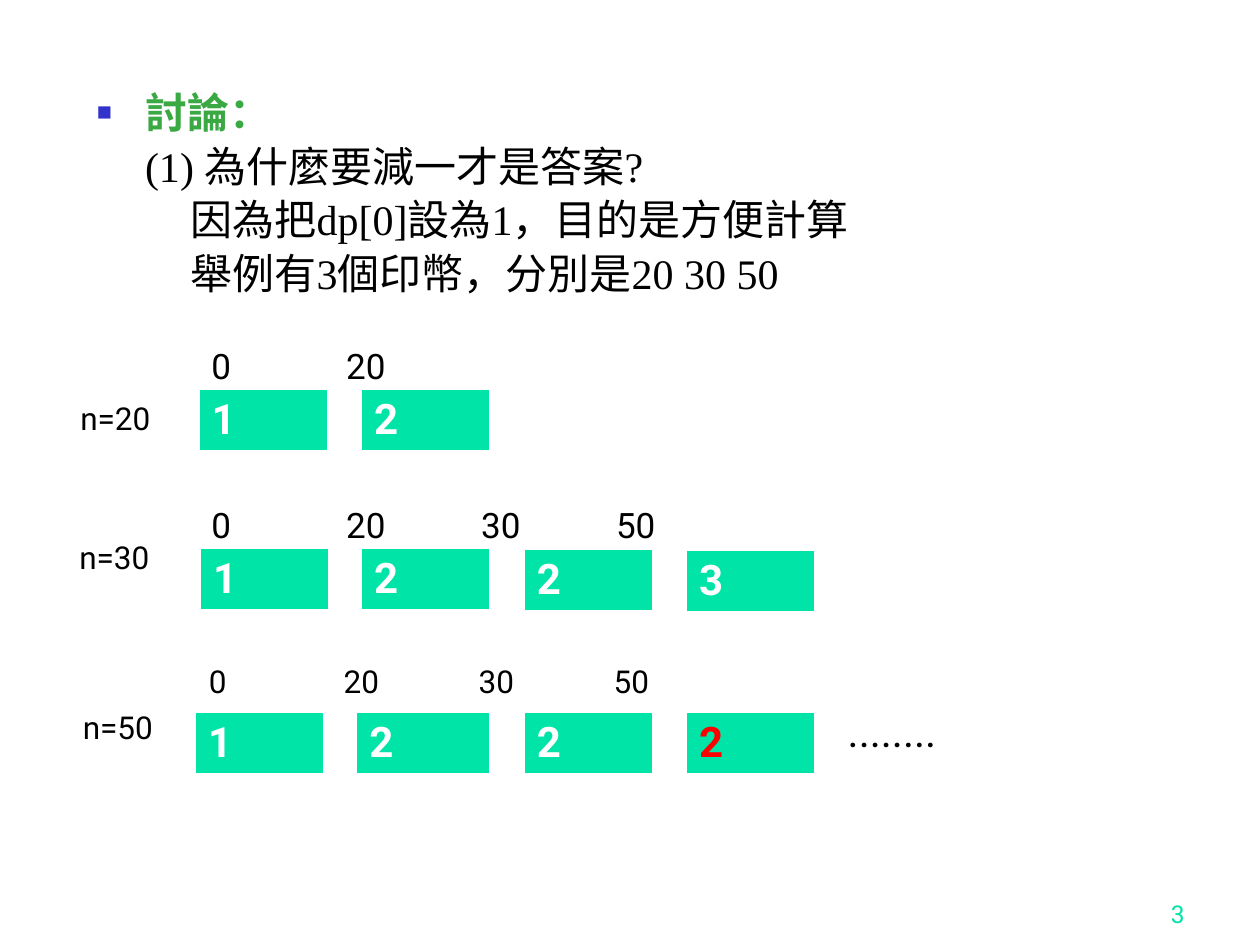
from pptx import Presentation
from pptx.dml.color import RGBColor
from pptx.enum.text import MSO_ANCHOR, MSO_AUTO_SIZE, PP_ALIGN
from pptx.oxml import parse_xml
from pptx.oxml.ns import nsdecls
from pptx.util import Cm, Pt

GREEN = RGBColor(0x3B, 0xA9, 0x43)
MINT = RGBColor(0x00, 0xE4, 0xA8)
RED = RGBColor(0xFF, 0x00, 0x00)
BLACK = RGBColor(0x00, 0x00, 0x00)
WHITE = RGBColor(0xFF, 0xFF, 0xFF)
BLUE = RGBColor(0x33, 0x33, 0xCC)
TAB = 2.72


def add_text(left, top, width, height, text, size, color=BLACK):
    sp = s.shapes.add_textbox(Cm(left), Cm(top), Cm(width), Cm(height))
    sp.text_frame.word_wrap = True
    p = sp.text_frame.paragraphs[0]
    p.text = text
    p.font.name = "Roboto"
    p.font.size = Pt(size)
    p.font.color.rgb = color
    return sp


def add_box(left, top, width, text, color):
    frame = s.shapes.add_table(1, 1, Cm(left), Cm(top), Cm(width), Cm(1.04))
    cell = frame.table.cell(0, 0)
    cell.text = text
    cell.fill.solid()
    cell.fill.fore_color.rgb = MINT
    font = cell.text_frame.paragraphs[0].font
    font.name = "Roboto"
    font.size = Pt(24)
    font.bold = True
    font.color.rgb = color
    tcPr = cell._tc.get_or_add_tcPr()
    for i, (side, points) in enumerate((("L", 1), ("R", 1), ("T", 1), ("B", 3))):
        tcPr.insert(i, parse_xml(
            f'<a:ln{side} {nsdecls("a")} w="{Pt(points)}"><a:solidFill>'
            f'<a:srgbClr val="{WHITE}"/></a:solidFill></a:ln{side}>'))


prs = Presentation()
prs.slide_width, prs.slide_height = Cm(25.4), Cm(19.05)
s = prs.slides.add_slide(prs.slide_layouts[1])
title = s.shapes.title
title.element.getparent().remove(title.element)

body = s.placeholders[1]
body.left, body.top, body.width, body.height = Cm(1.7), Cm(1.73), Cm(21.59), Cm(12.9)
tf = body.text_frame
tf.auto_size = MSO_AUTO_SIZE.NONE
lines = [
    ("討論：", 0.97, GREEN),
    ("(1) 為什麼要減一才是答案?", 0.97, BLACK),
    ("因為把dp[0]設為1，目的是方便計算", 1.89, BLACK),
    ("舉例有3個印幣，分別是20 30 50", 1.89, BLACK),
]
for i, (text, margin, color) in enumerate(lines):
    p = tf.paragraphs[0] if i == 0 else tf.add_paragraph()
    p.text = text
    p.line_spacing = 0.9
    p.space_before = Pt(4.8)
    p.font.name = "Times New Roman"
    p.font.size = Pt(24)
    p.font.bold = i == 0
    p.font.color.rgb = color
    pPr = p._p.get_or_add_pPr()
    pPr.set("marL", str(Cm(margin)))
    pPr.set("indent", str(Cm(-margin if i == 0 else 0)))
    bullet = (f'<a:buClr {nsdecls("a")}><a:srgbClr val="{BLUE}"/></a:buClr>',
              f'<a:buSzPct {nsdecls("a")} val="60000"/>',
              f'<a:buChar {nsdecls("a")} char="■"/>')
    no_bullet = (f'<a:buNone {nsdecls("a")}/>',)
    defRPr = pPr.find("{*}defRPr")
    for xml in bullet if i == 0 else no_bullet:
        defRPr.addprevious(parse_xml(xml))

number = add_text(18.85, 17.58, 5.28, 1.27, "3", 14, MINT)
number.text_frame.vertical_anchor = MSO_ANCHOR.BOTTOM
number.text_frame.paragraphs[0].alignment = PP_ALIGN.RIGHT

box_rows = [
    ("12", (4.01, 7.29), (7.85, 7.85)),
    ("1223", (4.04, 7.29, 10.57, 13.84), (11.05, 11.05, 11.07, 11.1)),
    ("1222", (3.94, 7.19, 10.57, 13.84), (14.35,) * 4),
]
for row, (values, lefts, tops) in enumerate(box_rows):
    for col, (value, left, top) in enumerate(zip(values, lefts, tops)):
        width = 2.69 if (row, col) == (2, 1) else 2.59
        add_box(left, top, width, value, RED if (row, col) == (2, 3) else WHITE)

headings = [
    (4.01, 6.83, 5.69, 1.12, ("0", "20"), 20),
    (4.01, 10.03, 12.42, 1.12, ("0", "20", "30", "50"), 20),
    (3.96, 13.23, 12.88, 1.02, ("0", "20", "30", "50"), 18),
]
for left, top, width, height, amounts, size in headings:
    sp = add_text(left, top, width, height, "\t".join(amounts), size)
    pPr = sp.text_frame.paragraphs[0]._p.get_or_add_pPr()
    stops = "".join(f'<a:tab pos="{Cm(TAB * i)}" algn="l"/>' for i in range(1, len(amounts)))
    pPr.find("{*}defRPr").addprevious(
        parse_xml(f'<a:tabLst {nsdecls("a")}>{stops}</a:tabLst>'))

add_text(16.84, 14.1, 4.57, 1.27, "........", 24)
for left, top, width, height, text in (
    (1.37, 7.92, 3, 1.02, "n=20"),
    (1.35, 10.72, 2.59, 2.06, "n=30"),
    (1.42, 14.15, 2.62, 2.06, "n=50"),
):
    add_text(left, top, width, height, text, 18)

prs.save("out.pptx")
